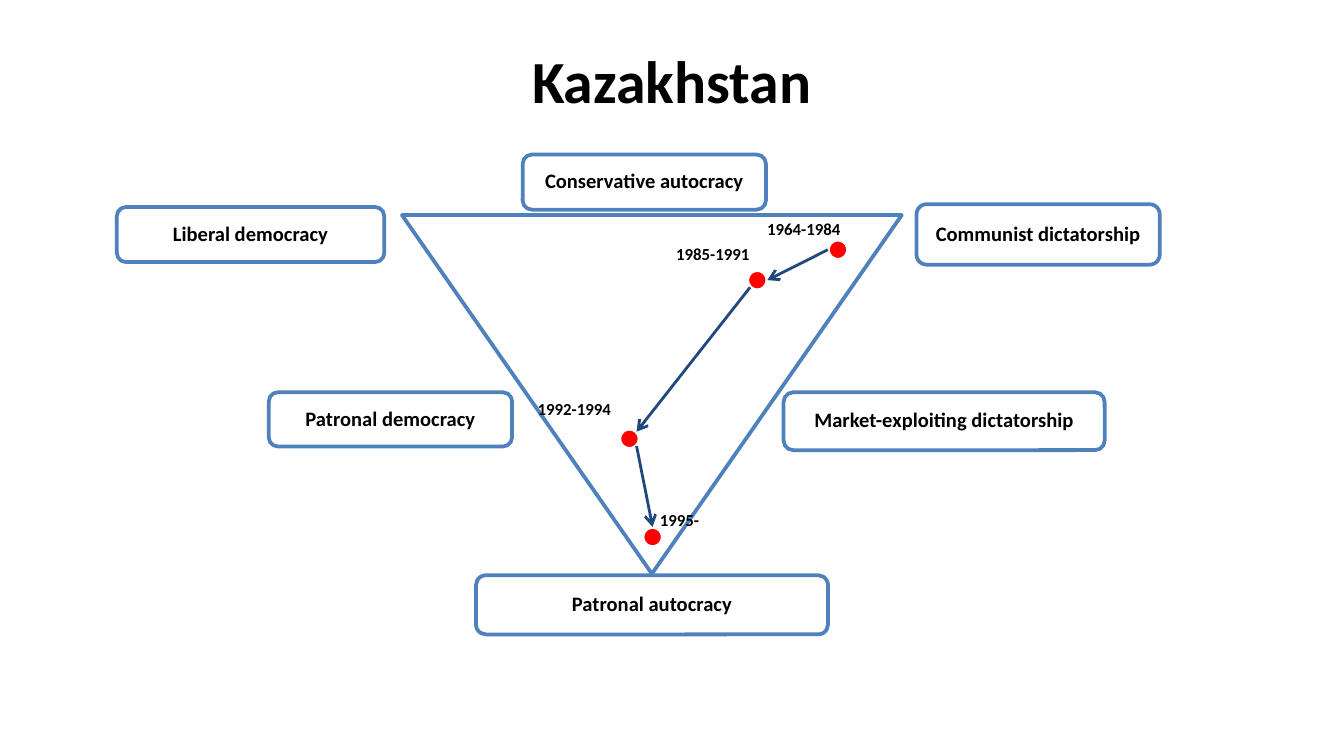
from math import cos, radians, sin

from lxml import etree
from pptx import Presentation
from pptx.dml.color import RGBColor
from pptx.enum import shapes, text
from pptx.oxml.ns import qn
from pptx.util import Pt

THEME = {
    "font": "Calibri",
    "text": "000000", "outline": "4F81BD", "box": "FFFFFF",
    "dot": "FF0000", "dot_line": "FFFFFF", "arrow": "1F497D",
    "title_size": 32, "box_size": 11, "period_size": 9,
    "line": 2, "arrow_line": 1.5, "box_opacity": 90,
}

TITLE = "Kazakhstan"
TITLE_AREA = (0, 15, 720, 55.5)
TRIANGLE = (215.3, 115.2, 267.8, 192.2)

# Regime type: left, top, width, height
REGIMES = [
    ("Communist dictatorship", (491, 109.4, 130.3, 32.4)),
    ("Liberal democracy", (62.6, 110.9, 143.3, 29.5)),
    ("Patronal autocracy", (255, 308.2, 188.6, 31.7)),
    ("Conservative autocracy", (280, 82.8, 130.3, 29.5)),
    ("Market-exploiting dictatorship", (419.8, 210.2, 172, 31)),
    ("Patronal democracy", (144, 210.2, 130.3, 29)),
]

# Period: dot centre, label corner
PERIODS = [
    ("1964-1984", (448.9, 133.8), (411, 117.4)),
    ("1985-1991", (405.7, 150.1), (362.2, 130.3)),
    ("1992-1994", (337.2, 235.1), (288, 213.8)),
    ("1995-", (349.6, 287.7), (353.5, 272.9)),
]
# Where each arrow leaves one dot and meets the next, in degrees clockwise from right
ARROW_ANGLES = [(180, 0), (135, -45), (45, -90)]
DOT = 10.8
LABEL_SIZE = (70, 17.3)


def rgb(name):
    return RGBColor.from_string(THEME[name])


def pts(*values):
    return [Pt(v) for v in values]


def write(tf, words, size, align, anchor, inset=0):
    tf.text = words
    tf.word_wrap = True
    tf.vertical_anchor = anchor
    tf.margin_left = tf.margin_right = tf.margin_top = tf.margin_bottom = Pt(inset)
    p = tf.paragraphs[0]
    p.alignment = align
    font = p.runs[0].font
    font.name, font.size, font.bold = THEME["font"], Pt(THEME[size]), True
    font.color.rgb = rgb("text")
    return p


def add_outlined(slide, kind, area, line, fill=None):
    sp = slide.shapes.add_shape(kind, *pts(*area))
    sp.shadow.inherit = False
    sp.line.color.rgb, sp.line.width = rgb(line), Pt(THEME["line"])
    if fill:
        sp.fill.solid()
        sp.fill.fore_color.rgb = rgb(fill)
    else:
        sp.fill.background()
    return sp


def add_regime(slide, name, area):
    sp = add_outlined(slide, shapes.MSO_SHAPE.ROUNDED_RECTANGLE, area, "outline", "box")
    color = sp.fill._xPr.find(qn("a:solidFill"))[0]
    etree.SubElement(color, qn("a:alpha"), val=str(THEME["box_opacity"] * 1000))
    p = write(sp.text_frame, name, "box_size", text.PP_ALIGN.CENTER,
              text.MSO_ANCHOR.MIDDLE, 3.6)
    p.line_spacing = 0.9


def add_dot(slide, centre):
    x, y = centre
    area = (x - DOT / 2, y - DOT / 2, DOT, DOT)
    add_outlined(slide, shapes.MSO_SHAPE.OVAL, area, "dot_line", "dot")


def rim(centre, degrees):
    """Point on the edge of the dot at this centre."""
    x, y = centre
    a = radians(degrees)
    return pts(x + DOT / 2 * cos(a), y + DOT / 2 * sin(a))


def add_arrow(slide, start, end):
    line = slide.shapes.add_connector(shapes.MSO_CONNECTOR.STRAIGHT, *start, *end)
    line.line.color.rgb, line.line.width = rgb("arrow"), Pt(THEME["arrow_line"])
    etree.SubElement(line.line._get_or_add_ln(), qn("a:tailEnd"), type="arrow")
    etree.SubElement(line._element.spPr, qn("a:effectLst"))


def add_period(slide, name, corner):
    box = slide.shapes.add_textbox(*pts(*corner, *LABEL_SIZE))
    p = write(box.text_frame, name, "period_size", text.PP_ALIGN.LEFT, text.MSO_ANCHOR.TOP)
    p.space_before = p.space_after = Pt(5)


def main():
    prs = Presentation()
    prs.slide_width, prs.slide_height = pts(720, 405)
    slide = prs.slides.add_slide(prs.slide_layouts[5])

    title = slide.shapes.title
    title.left, title.top, title.width, title.height = pts(*TITLE_AREA)
    write(title.text_frame, TITLE, "title_size", text.PP_ALIGN.CENTER, text.MSO_ANCHOR.MIDDLE)

    triangle = add_outlined(slide, shapes.MSO_SHAPE.ISOSCELES_TRIANGLE, TRIANGLE, "outline")
    triangle.rotation = 180
    for name, area in REGIMES:
        add_regime(slide, name, area)

    centres = [centre for _, centre, _ in PERIODS]
    for centre in centres:
        add_dot(slide, centre)
    for a, b, (leave, meet) in zip(centres, centres[1:], ARROW_ANGLES):
        add_arrow(slide, rim(a, leave), rim(b, meet))
    for name, _, corner in PERIODS:
        add_period(slide, name, corner)

    prs.save("out.pptx")


if __name__ == "__main__":
    main()
